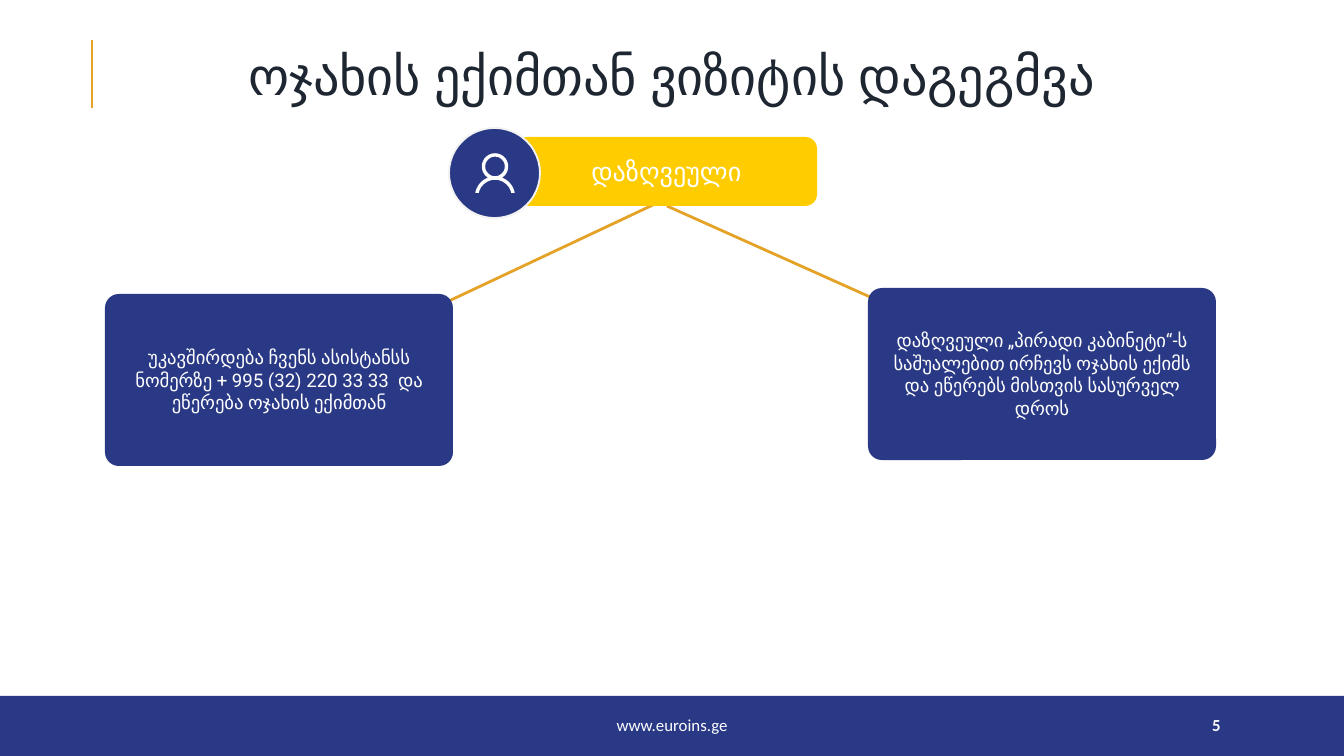
from dataclasses import dataclass
from math import cos, radians, sin

from pptx import Presentation
from pptx.dml.color import RGBColor
from pptx.enum.shapes import MSO_CONNECTOR as Connector, MSO_SHAPE as Shape
from pptx.enum.text import MSO_ANCHOR as Anchor, MSO_AUTO_SIZE as AutoSize, PP_ALIGN as Align
from pptx.oxml.ns import qn
from pptx.util import Emu, Pt

PX = 914400 / 134.4
NAVY, GOLD, ORANGE = "2A3985", "FFCC00", "E4A327"
WHITE, PALE, DARK = "FFFFFF", "F2F2F2", "1E2631"
TITLE_ONLY = 5


@dataclass(frozen=True)
class Box:
    left: int
    top: int
    width: int
    height: int


@dataclass(frozen=True)
class Card:
    box: Box
    fill: str
    text: str
    size: int
    radius: float


@dataclass(frozen=True)
class Line:
    start: tuple[int, int]
    end: tuple[int, int]
    width: float


LINES = [
    Line((92, 40), (92, 108), 1),
    Line((655, 204), (449, 301), 1.5),
    Line((879, 301), (667, 206), 1.5),
]
CARDS = [
    Card(Box(516, 137, 301, 69), GOLD, "დაზღვეული", 14, 0.17),
    Card(Box(868, 288, 348, 172), NAVY,
         "დაზღვეული „პირადი კაბინეტი“-ს საშუალებით ირჩევს ოჯახის ექიმს "
         "და ეწერებს მისთვის სასურველ დროს", 10, 0.08),
    Card(Box(105, 294, 348, 172), NAVY,
         "უკავშირდება ჩვენს ასისტანსს ნომერზე + 995 (32) 220 33 33  და "
         "ეწერება ოჯახის ექიმთან", 10, 0.08),
]


def px(value: float) -> Emu:
    return Emu(round(value * PX))


def color(value: str) -> RGBColor:
    return RGBColor.from_string(value)


def place(box: Box) -> tuple[Emu, ...]:
    return px(box.left), px(box.top), px(box.width), px(box.height)


def write(shape, text: str, *, size: int, font: str = "Roboto", ink: str = WHITE,
          bold: bool = False, align=Align.CENTER, spacing: float = 1.0) -> None:
    frame = shape.text_frame
    frame.word_wrap = True
    frame.auto_size = AutoSize.NONE
    frame.vertical_anchor = Anchor.MIDDLE
    paragraph = frame.paragraphs[0]
    paragraph.alignment = align
    paragraph.line_spacing = spacing
    run = paragraph.add_run()
    run.text = text
    run.font.name = font
    run.font.size = Pt(size)
    run.font.bold = bold
    run.font.color.rgb = color(ink)


def paint(shape, fill: str, outline: str | None = None) -> None:
    shape.shadow.inherit = False
    shape.fill.solid()
    shape.fill.fore_color.rgb = color(fill)
    if outline:
        shape.line.color.rgb = color(outline)
        shape.line.width = Pt(1)
    else:
        shape.line.fill.background()


def draw_line(slide, line: Line) -> None:
    ends = [px(value) for value in line.start + line.end]
    connector = slide.shapes.add_connector(Connector.STRAIGHT, *ends)
    connector.line.color.rgb = color(ORANGE)
    connector.line.width = Pt(line.width)
    properties = connector._element.spPr
    properties.append(properties.makeelement(qn("a:effectLst"), {}))


def draw_card(slide, card: Card) -> None:
    shape = slide.shapes.add_shape(Shape.ROUNDED_RECTANGLE, *place(card.box))
    shape.adjustments[0] = card.radius
    paint(shape, card.fill)
    write(shape, card.text, size=card.size)


def arc(center: tuple[float, float], radius: float, start: int, end: int,
        steps: int = 32) -> list[tuple[float, float]]:
    angles = [radians(start + (end - start) * step / steps) for step in range(steps + 1)]
    return [(10 * (center[0] + radius * sin(angle)), 10 * (center[1] - radius * cos(angle)))
            for angle in angles]


def draw_person(slide) -> None:
    badge = slide.shapes.add_shape(Shape.OVAL, *place(Box(449, 128, 91, 90)))
    paint(badge, NAVY, PALE)
    head, body = (495, 166.5), (495, 196.5)
    silhouette = (arc(head, 13.2, 212, 508) + arc(body, 20, 20, 80)
                  + arc(body, 16.6, 78, -78) + arc(body, 20, -80, -20))
    face = arc(head, 9.8, 360, 0)
    builder = slide.shapes.build_freeform(*silhouette[0], scale=PX / 10)
    builder.add_line_segments(silhouette[1:], close=True)
    builder.move_to(*face[0])
    builder.add_line_segments(face[1:], close=True)
    paint(builder.convert_to_shape(), WHITE)


def draw_footer(slide) -> None:
    band = slide.shapes.add_shape(Shape.RECTANGLE, *place(Box(0, 696, 1344, 60)))
    paint(band, NAVY)
    address = slide.shapes.add_textbox(*place(Box(445, 705, 454, 40)))
    write(address, "www.euroins.ge", size=9, font="Calibri")
    number = slide.shapes.add_textbox(*place(Box(960, 705, 274, 40)))
    write(number, "5", size=9, font="Calibri", bold=True, align=Align.RIGHT)


def main() -> None:
    presentation = Presentation()
    presentation.slide_width, presentation.slide_height = px(1344), px(756)
    slide = presentation.slides.add_slide(presentation.slide_layouts[TITLE_ONLY])
    title = slide.shapes.title
    title.left, title.top, title.width, title.height = place(Box(93, 40, 1158, 78))
    write(title, "ოჯახის ექიმთან ვიზიტის დაგეგმვა", size=28, ink=DARK, spacing=0.9)
    draw_footer(slide)
    for line in LINES:
        draw_line(slide, line)
    for card in CARDS:
        draw_card(slide, card)
    draw_person(slide)
    presentation.save("out.pptx")


if __name__ == "__main__":
    main()
